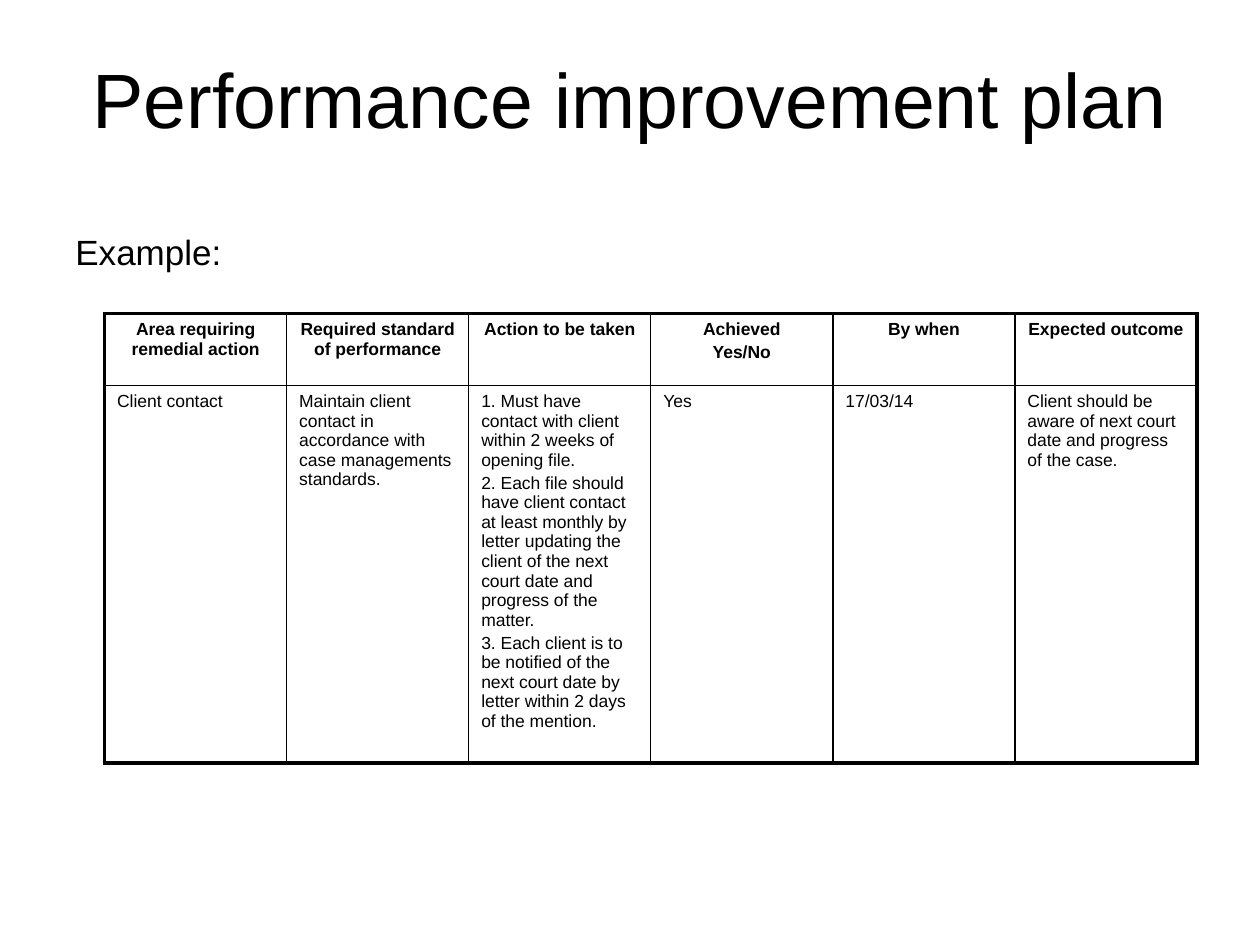
"""Build the performance improvement plan slide."""
from dataclasses import dataclass

from lxml import etree
from pptx import Presentation
from pptx import util as u
from pptx.dml.color import RGBColor
from pptx.enum import text
from pptx.oxml.ns import qn

TITLE = "Performance improvement plan"
INTRO = "Example:"
PLAN = [
    ("Area requiring remedial action", "Client contact"),
    ("Required standard of performance",
     "Maintain client contact in accordance with case managements standards."),
    ("Action to be taken",
     "1. Must have contact with client within 2 weeks of opening file.\n"
     "2. Each file should have client contact at least monthly by letter updating "
     "the client of the next court date and progress of the matter.\n"
     "3. Each client is to be notified of the next court date by letter within "
     "2 days of the mention."),
    ("Achieved\nYes/No", "Yes"),
    ("By when", "17/03/14"),
    ("Expected outcome",
     "Client should be aware of next court date and progress of the case."),
]
ROW_HEIGHTS = (0.57, 2.95)
TABLE_LEFT, TABLE_TOP, TABLE_WIDTH = 0.83, 2.49, 8.67


@dataclass(frozen=True)
class Theme:
    """Colours, font, type sizes and line widths."""
    ink: str = "000000"
    font: str = "Arial"
    title: float = 44
    body: float = 20
    cell: float = 10
    outer: float = 2.25
    inner: float = 1


THEME = Theme()


def write(frame, content, size, align=text.PP_ALIGN.LEFT, bold=False):
    """Fill a text frame, one paragraph for each line."""
    frame.word_wrap = True
    frame.text = content
    for index, para in enumerate(frame.paragraphs):
        para.alignment = align
        para.space_before = u.Pt(size * 0.2 if index else 0)
        para.font.name = THEME.font
        para.font.size = u.Pt(size)
        para.font.bold = bold
        para.font.color.rgb = RGBColor.from_string(THEME.ink)


def add_text(page, bounds, top_inset, content, size, align=text.PP_ALIGN.LEFT):
    """Add a top-anchored text box and return its frame."""
    frame = page.shapes.add_textbox(*map(u.Inches, bounds)).text_frame
    frame.vertical_anchor = text.MSO_ANCHOR.TOP
    frame.margin_top = u.Inches(top_inset)
    write(frame, content, size, align)
    return frame


def set_borders(cell, widths):
    """Draw the left, right, top and bottom borders of a cell."""
    properties = cell._tc.get_or_add_tcPr()
    for index, (side, width) in enumerate(zip("LRTB", widths)):
        line = etree.Element(qn(f"a:ln{side}"), w=str(u.Pt(width)))
        fill = etree.SubElement(line, qn("a:solidFill"))
        etree.SubElement(fill, qn("a:srgbClr"), val=THEME.ink)
        properties.insert(index, line)


def add_plan(page):
    """Add the plan table with a heavy outer frame."""
    rows, columns = len(ROW_HEIGHTS), len(PLAN)
    bounds = (TABLE_LEFT, TABLE_TOP, TABLE_WIDTH, sum(ROW_HEIGHTS))
    table = page.shapes.add_table(rows, columns, *map(u.Inches, bounds)).table
    table.first_row = table.horz_banding = False
    for row, height in zip(table.rows, ROW_HEIGHTS):
        row.height = u.Inches(height)
    for column, entries in enumerate(PLAN):
        table.columns[column].width = u.Inches(TABLE_WIDTH / columns)
        for row, content in enumerate(entries):
            cell = table.cell(row, column)
            header = row == 0
            align = text.PP_ALIGN.CENTER if header else text.PP_ALIGN.LEFT
            write(cell.text_frame, content, THEME.cell, align, header)
            cell.fill.background()
            edges = (column == 0, column == columns - 1, header, row == rows - 1)
            set_borders(cell, [THEME.outer if edge else THEME.inner for edge in edges])


def main():
    """Create and save the deck."""
    deck = Presentation()
    deck.slide_width, deck.slide_height = u.Inches(10), u.Inches(7.5)
    page = deck.slides.add_slide(deck.slide_layouts[6])
    add_text(page, (0.5, 0.3, 9, 1.25), 0.11, TITLE, THEME.title, text.PP_ALIGN.CENTER)
    intro = add_text(page, (0.5, 1.75, 9.23, 4.95), 0.08, INTRO, THEME.body)
    properties = intro.paragraphs[0]._p.get_or_add_pPr()
    properties.set("marL", str(u.Inches(0.38)))
    properties.set("indent", str(u.Inches(-0.38)))
    add_plan(page)
    deck.save("out.pptx")


if __name__ == "__main__":
    main()
